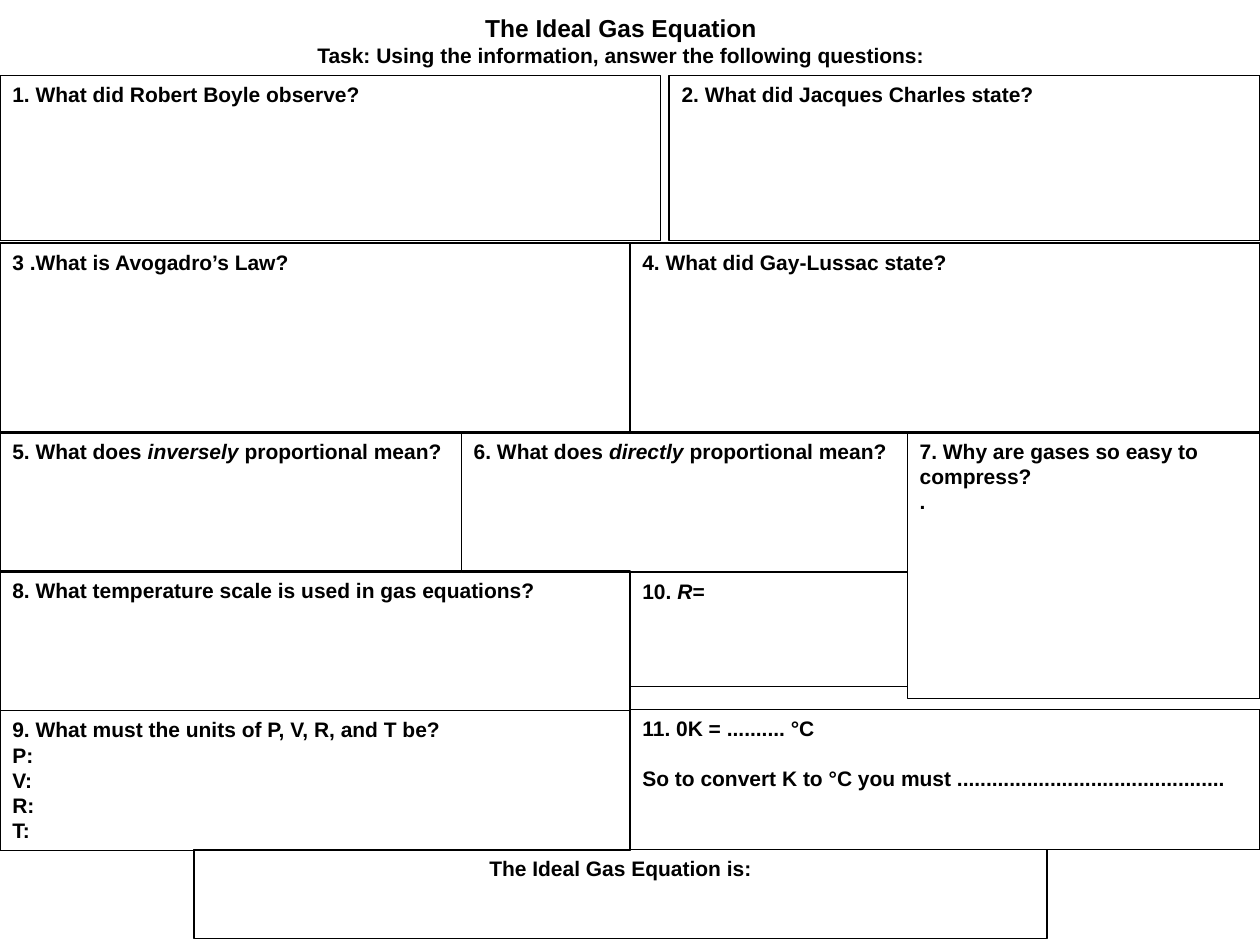
"""Build the Ideal Gas Equation question sheet."""
import pptx
import pptx.util
import pptx.dml.color
import pptx.enum.shapes
import pptx.enum.text

Cm = pptx.util.Cm
Pt = pptx.util.Pt
HUES = {"ink": "000000"}
INK = pptx.dml.color.RGBColor.from_string(HUES["ink"])
LEFT = pptx.enum.text.PP_ALIGN.LEFT
MID = pptx.enum.text.PP_ALIGN.CENTER


def write(para, text, size=12, align=LEFT, gap=0):
    """Add bold text to a paragraph, with parts between asterisks in italics."""
    para.alignment = align
    para.space_before = Pt(gap)
    for i, part in enumerate(text.split("*")):
        run = para.add_run()
        run.text = part
        font = run.font
        font.name = "Arial"
        font.size = Pt(size)
        font.bold = True
        font.italic = i % 2 == 1
        font.color.rgb = INK


deck = pptx.Presentation()
wide, high = 25.4, 19.05
deck.slide_width, deck.slide_height = Cm(wide), Cm(high)
slide = deck.slides.add_slide(deck.slide_layouts[6])

head = slide.shapes.add_textbox(Cm(1.09), Cm(0.13), Cm(22.86), Cm(1.4)).text_frame
head.word_wrap = True
write(head.paragraphs[0], "The Ideal Gas Equation", size=14, align=MID)
write(head.add_paragraph(), "Task: Using the information, answer the following questions:", align=MID)

half = wide / 2
third, last = 9.3, 18.29
top, next_top, mid_top = 1.52, 4.9, 8.71
tall, short = 3.84, 2.82
low_top = mid_top + short
base = low_top + short

boxes = [
    (0, top, 13.31, 3.33, ["1. What did Robert Boyle observe?"]),
    (13.49, top, wide - 13.49, 3.33, ["2. What did Jacques Charles state?"]),
    (0, next_top, half, tall, ["3 .What is Avogadro’s Law?"]),
    (half, next_top, half, tall, ["4. What did Gay-Lussac state?"]),
    (0, mid_top, third, short, ["5. What does *inversely* proportional mean?"]),
    (third, mid_top, last - third, short, ["6. What does *directly* proportional mean?"]),
    (last, mid_top, wide - last, 5.38, ["7. Why are gases so easy to compress?", "."]),
    (0, low_top - 0.02, half, short, ["8. What temperature scale is used in gas equations?"]),
    (0, base - 0.02, half, short,
     ["9. What must the units of P, V, R, and T be?", "P:", "V:", "R:", "T:"]),
    (half, low_top, last - half, 2.31, ["10. *R*="]),
    (half, base - 0.05, half, short,
     ["11. 0K = .......... °C", "So to convert K to °C you must " + "." * 46]),
    (3.91, 17.12, 17.2, 1.8, ["The Ideal Gas Equation is:"]),
]

for x, y, w, h, lines in boxes:
    box = slide.shapes.add_shape(
        pptx.enum.shapes.MSO_SHAPE.RECTANGLE, Cm(x), Cm(y), Cm(w), Cm(h))
    box.shadow.inherit = False
    box.fill.background()
    box.line.color.rgb = INK
    box.line.width = Pt(0.75)
    frame = box.text_frame
    frame.word_wrap = True
    frame.vertical_anchor = pptx.enum.text.MSO_ANCHOR.TOP
    for i, line in enumerate(lines):
        para = frame.add_paragraph() if i else frame.paragraphs[0]
        write(para, line, align=MID if line.startswith("The") else LEFT,
              gap=14 if line.startswith("So") else 0)

deck.save("out.pptx")
